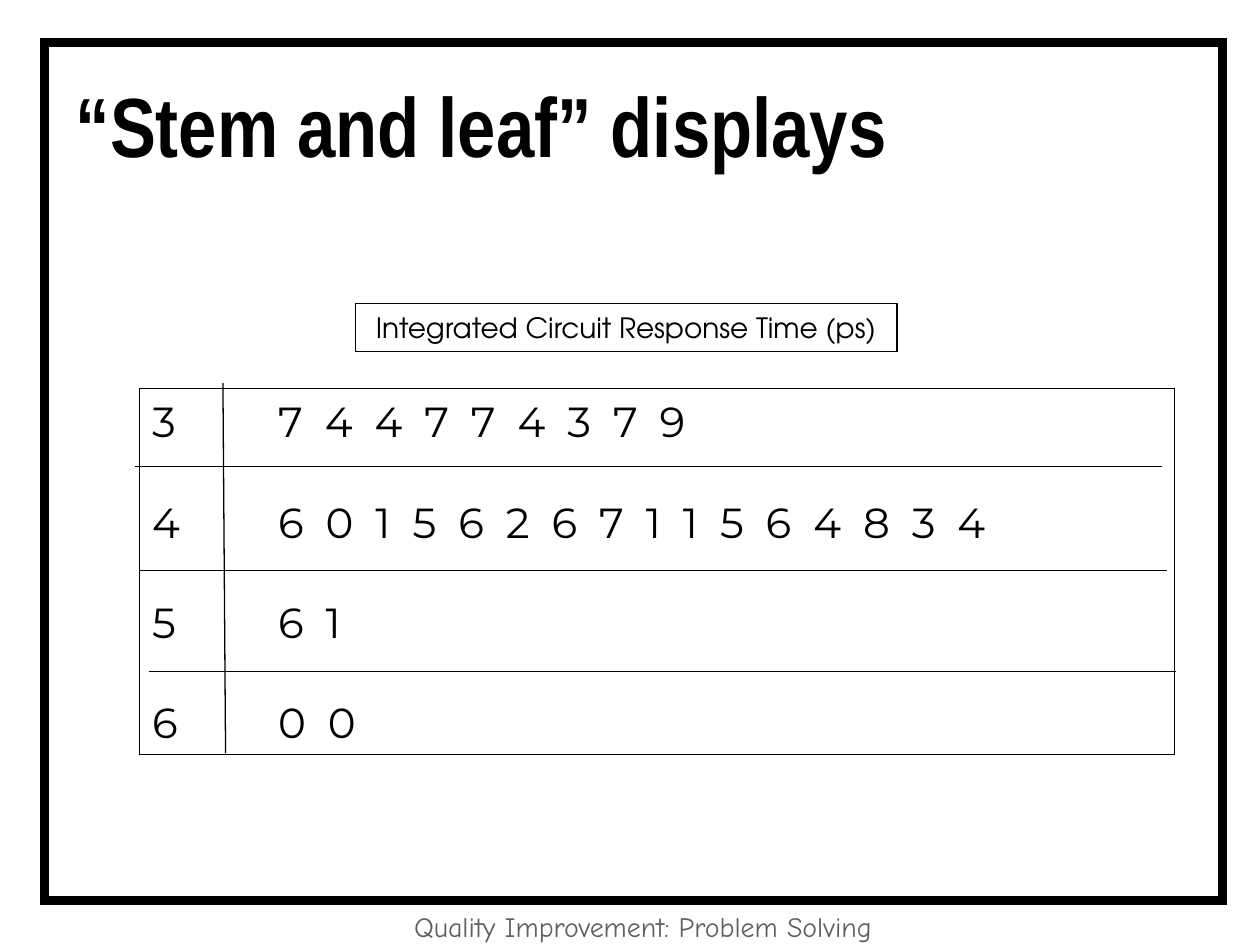
from lxml.etree import SubElement
from pptx import Presentation
from pptx.dml.color import RGBColor
from pptx.enum.shapes import MSO_CONNECTOR, MSO_SHAPE
from pptx.enum.text import MSO_ANCHOR, MSO_AUTO_SIZE, PP_ALIGN
from pptx.oxml.ns import qn
from pptx.util import Pt

BLACK = RGBColor(0x00, 0x00, 0x00)
GREY = RGBColor(0x5F, 0x5F, 0x5F)

STEMS = {
    "3": "744774379",
    "4": "6015626711564834",
    "5": "61",
    "6": "00",
}


class SlideBuilder:
    thin = 0.75

    def __init__(self, slide):
        self.slide = slide

    def font(self, paragraph, name, size, color=BLACK, bold=False):
        font = paragraph.font
        font.name, font.size, font.bold = name, Pt(size), bold
        font.color.rgb = color

    def frame_text(self, shape, wrap=False):
        frame = shape.text_frame
        frame.word_wrap = wrap
        frame.auto_size = MSO_AUTO_SIZE.NONE
        frame.vertical_anchor = MSO_ANCHOR.MIDDLE
        return frame

    def title(self, text, left, top, width, height):
        title = self.slide.shapes.title
        title.left, title.top = Pt(left), Pt(top)
        title.width, title.height = Pt(width), Pt(height)
        heading = self.frame_text(title, wrap=True).paragraphs[0]
        heading.text = text
        heading.alignment = PP_ALIGN.LEFT
        heading.line_spacing = 0.7
        self.font(heading, "Arial Narrow", 48, bold=True)

    def box(self, left, top, width, height, line=thin):
        """Add an unfilled rectangle with sharp corners."""
        box = self.slide.shapes.add_shape(
            MSO_SHAPE.RECTANGLE, Pt(left), Pt(top), Pt(width), Pt(height))
        box.shadow.inherit = False
        box.fill.background()
        box.line.color.rgb = BLACK
        box.line.width = Pt(line)
        outline = box._element.spPr.find(qn("a:ln"))
        SubElement(outline, qn("a:miter"), lim="800000")
        return box

    def text_area(self, left, top, width, height):
        return self.slide.shapes.add_textbox(
            Pt(left), Pt(top), Pt(width), Pt(height))

    def caption(self, shape, text, name, color=BLACK):
        """Write one centred line into a shape."""
        line = self.frame_text(shape).paragraphs[0]
        line.text = text
        line.alignment = PP_ALIGN.CENTER
        self.font(line, name, 16, color)

    def tab_stop(self, paragraph, position):
        """Add a left tab stop; call before setting the paragraph font."""
        tabs = SubElement(paragraph._p.get_or_add_pPr(), qn("a:tabLst"))
        SubElement(tabs, qn("a:tab"), pos=str(Pt(position)), algn="l")

    def stem_rows(self, shape, stems):
        """Write a paragraph per stem, with its leaves after a tab."""
        frame = self.frame_text(shape)
        for index, (stem, leaves) in enumerate(stems.items()):
            row = frame.add_paragraph() if index else frame.paragraphs[0]
            row.alignment = PP_ALIGN.LEFT
            row.space_before = Pt(28.5 if index else 0)
            self.tab_stop(row, 72)
            self.font(row, "Montserrat", 24)
            row.add_run().text = stem + "\t"
            leaf_run = row.add_run()
            leaf_run.text = " ".join(leaves)
            # Letter spacing, in hundredths of a point
            leaf_run.font._element.set("spc", "315")

    def rule(self, x1, y1, x2, y2):
        rule = self.slide.shapes.add_connector(
            MSO_CONNECTOR.STRAIGHT, Pt(x1), Pt(y1), Pt(x2), Pt(y2))
        rule.line.color.rgb = BLACK
        rule.line.width = Pt(self.thin)
        SubElement(rule._element.spPr, qn("a:effectLst"))


def main():
    deck = Presentation()
    deck.slide_width, deck.slide_height = Pt(720), Pt(540)
    builder = SlideBuilder(deck.slides.add_slide(deck.slide_layouts[5]))

    builder.box(25.5, 24.1, 673.2, 490.3, line=5)
    footer = builder.text_area(253.4, 518.4, 228.2, 21.6)
    builder.caption(footer, "Quality Improvement: Problem Solving",
                    "Comic Neue", GREY)
    builder.title("“Stem and leaf” displays", 36, 33, 546, 90)

    display = builder.box(79.9, 221.8, 591.1, 209.5)
    builder.stem_rows(display, STEMS)
    builder.rule(127.4, 219, 128.9, 430.5)
    for left, y in ((77, 266.4), (79.9, 326.2), (85, 383.8)):
        builder.rule(left, y, left + 586.8, y)

    heading = builder.box(203, 173.5, 309.6, 27.4)
    builder.caption(heading, "Integrated Circuit Response Time (ps)",
                    "TeX Gyre Adventor")

    deck.save("out.pptx")


if __name__ == "__main__":
    main()
